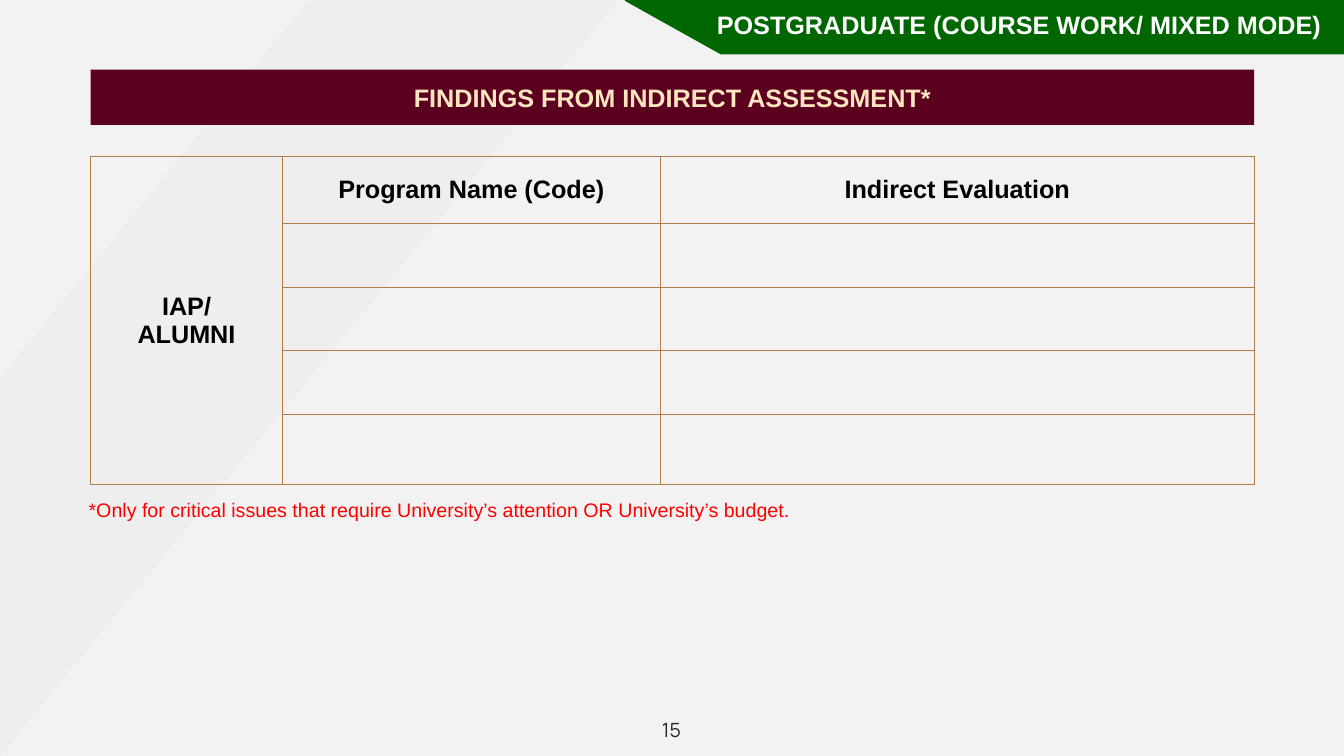
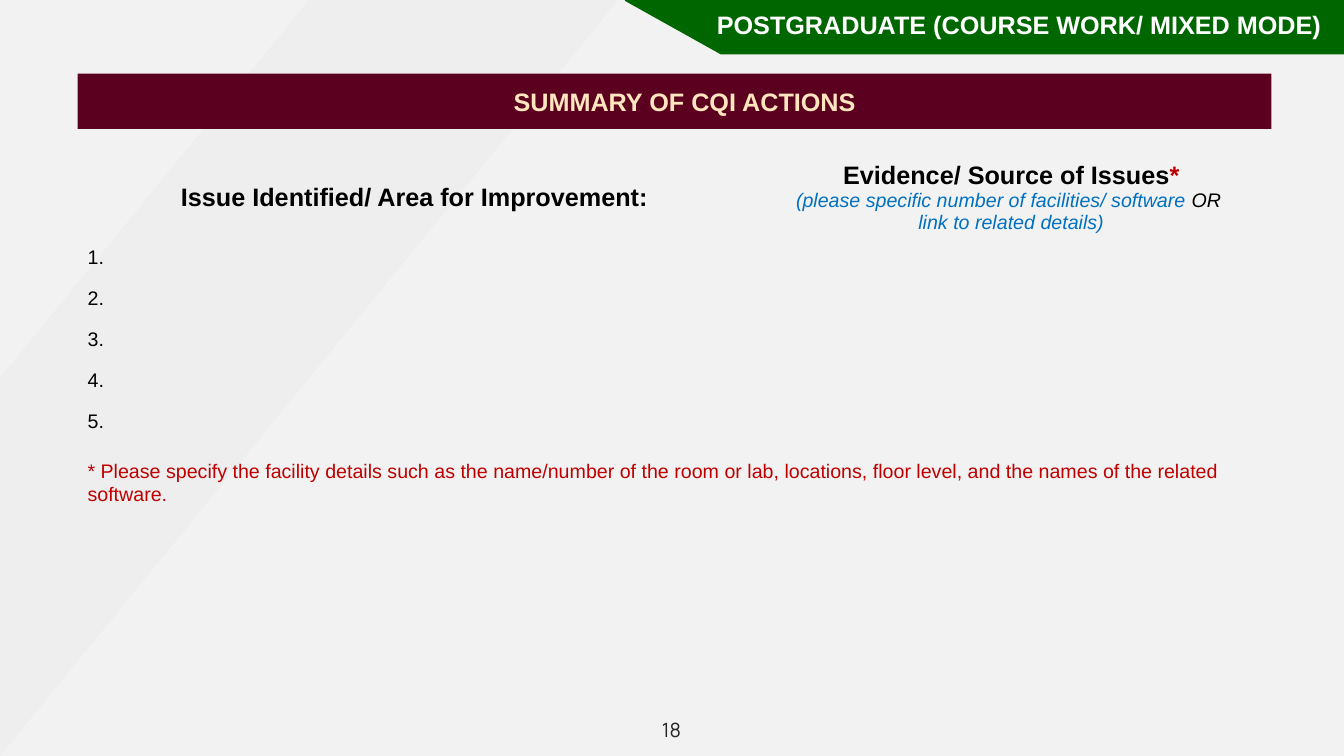
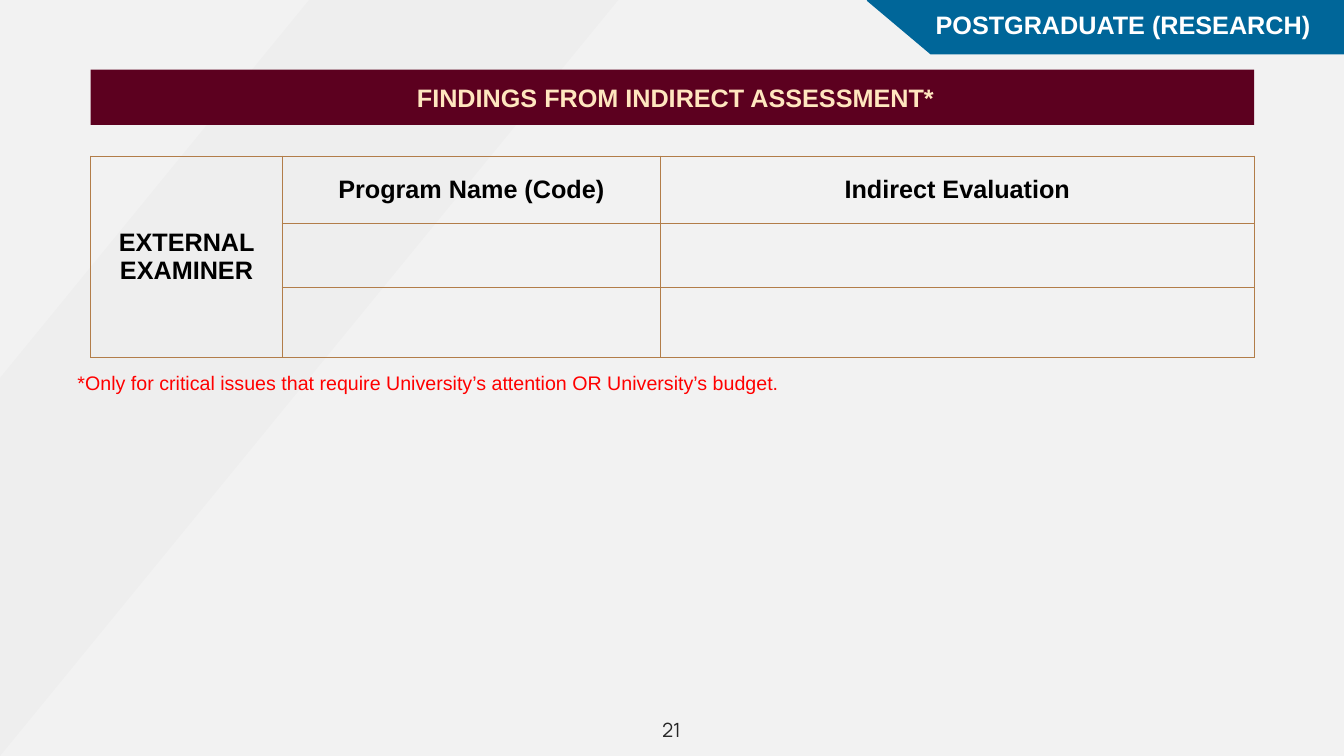
from collections import namedtuple

from lxml import etree
from pptx import Presentation, util as u
from pptx.dml.color import RGBColor
from pptx.enum import shapes, text
from pptx.oxml.ns import qn

Box = namedtuple("Box", "left top width height")

SLIDE_W, SLIDE_H = 13.33, 7.5
PAPER, STRIPE = "F2F2F2", "BFBFBF"
MAROON, CREAM, BRONZE = "5C001F", "FFE6BF", "B27D49"
GREEN, BLUE, WHITE, BLACK = "006600", "006699", "FFFFFF", "000000"
RED, DARK_RED, LINK_BLUE, GREY = "FF0000", "C00000", "0070C0", "262626"
NO_TABLE_STYLE = "{2D5ABB26-0587-4C30-8999-92F81FD0307C}"
HEADING, BODY = 18, 14
CENTER = text.PP_ALIGN.CENTER
MIDDLE = text.MSO_ANCHOR.MIDDLE

COURSE_WORK = dict(label="POSTGRADUATE (COURSE WORK/ MIXED MODE)", color=GREEN,
                   left=6.19, slant=0.96, label_left=7.11)
RESEARCH = dict(label="POSTGRADUATE (RESEARCH)", color=BLUE,
                left=8.59, slant=0.64, label_left=9.28)
CRITICAL_NOTE = ("*Only for critical issues that require University’s attention "
                 "OR University’s budget.")
FACILITY_NOTE = ("* Please specify the facility details such as the name/number of the room "
                 "or lab, locations, floor level, and the names of the related software.")


def rgb(color):
    return RGBColor.from_string(color)


def inches(lengths):
    return [u.Inches(length) for length in lengths]


def paint(shape, color):
    shape.shadow.inherit = False
    shape.fill.solid()
    shape.fill.fore_color.rgb = rgb(color)
    shape.line.fill.background()


def write(frame, paragraphs, align=text.PP_ALIGN.LEFT, **style):
    """Fill a text frame; a paragraph is a string or a list of (text, style changes)."""
    if isinstance(paragraphs, str):
        paragraphs = [paragraphs]
    for index, content in enumerate(paragraphs):
        paragraph = frame.add_paragraph() if index else frame.paragraphs[0]
        paragraph.alignment = align
        runs = [(content, {})] if isinstance(content, str) else content
        for words, changes in runs:
            look = dict(size=HEADING, font="Arial", color=BLACK, bold=False, italic=False)
            look.update(style, **changes)
            run = paragraph.add_run()
            run.text = words
            run.font.size = u.Pt(look["size"])
            run.font.name = look["font"]
            run.font.color.rgb = rgb(look["color"])
            run.font.bold = look["bold"]
            run.font.italic = look["italic"]


def add_label(slide, box, words, anchor=text.MSO_ANCHOR.TOP, **style):
    frame = slide.shapes.add_textbox(*inches(box)).text_frame
    frame.word_wrap = True
    frame.vertical_anchor = anchor
    write(frame, words, **style)


def add_backdrop(slide):
    stripe = slide.shapes.add_shape(shapes.MSO_SHAPE.DIAGONAL_STRIPE,
                                    *inches(Box(0, 0, 0.46 * SLIDE_W, SLIDE_H)))
    paint(stripe, STRIPE)
    tint = stripe.fill._xPr.find(qn("a:solidFill"))[0]
    etree.SubElement(tint, qn("a:alpha"), val="8000")


def add_ribbon(slide, label, color, left, slant, label_left):
    top, bottom = -0.03, 0.54
    corners = [(SLIDE_W, bottom), (left + slant, bottom), (left + 0.01, 0.01),
               (left, top), (SLIDE_W, top)]
    start, *others = [inches(corner) for corner in corners]
    builder = slide.shapes.build_freeform(*start)
    builder.add_line_segments(others, close=True)
    ribbon = builder.convert_to_shape()
    paint(ribbon, color)
    frame = ribbon.text_frame
    frame.word_wrap = True
    frame.vertical_anchor = text.MSO_ANCHOR.TOP
    frame.margin_left = u.Inches(label_left - left)
    frame.margin_top = u.Inches(0.09 - top)
    frame.margin_right = frame.margin_bottom = 0
    write(frame, label, color=WHITE, bold=True)


def add_title_bar(slide, box, title, shift=0):
    """Draw the title bar; shift moves the title right of the bar's middle."""
    bar = slide.shapes.add_shape(shapes.MSO_SHAPE.RECTANGLE, *inches(box))
    paint(bar, MAROON)
    bar.text_frame.margin_left = u.Inches(0.1 + 2 * shift)
    bar.text_frame.vertical_anchor = MIDDLE
    write(bar.text_frame, title, align=CENTER, color=CREAM, bold=True)


def add_plain_table(slide, left, top, widths, heights):
    box = Box(left, top, sum(widths), sum(heights))
    graphic = slide.shapes.add_table(len(heights), len(widths), *inches(box))
    table = graphic.table
    table.first_row = table.horz_banding = False
    graphic._element.find(".//" + qn("a:tableStyleId")).text = NO_TABLE_STYLE
    for column, width in zip(table.columns, widths):
        column.width = u.Inches(width)
    for row, height in zip(table.rows, heights):
        row.height = u.Inches(height)
    for cell in table.iter_cells():
        cell.fill.background()
    return table


def outline(cell, color, points=1):
    properties = cell._tc.get_or_add_tcPr()
    for index, side in enumerate(("lnL", "lnR", "lnT", "lnB")):
        line = etree.Element(qn("a:" + side), w=str(u.Pt(points)))
        fill = etree.SubElement(line, qn("a:solidFill"))
        etree.SubElement(fill, qn("a:srgbClr"), val=color)
        properties.insert(index, line)


def fill_heading(cell, words):
    cell.vertical_anchor = MIDDLE
    write(cell.text_frame, words, align=CENTER, bold=True)


def add_page(deck, ribbon, number):
    slide = deck.slides.add_slide(deck.slide_layouts[6])
    add_backdrop(slide)
    add_ribbon(slide, **ribbon)
    add_label(slide, Box(5.16, 7.04, 3, 0.4), number, anchor=MIDDLE,
              align=CENTER, size=BODY, font="Manrope", color=GREY)
    return slide


def findings_page(deck, ribbon, number, source, entries, note_left, shift=0):
    """Build a findings page with a table of empty entries for one source."""
    slide = add_page(deck, ribbon, number)
    bar = Box(0.9, 0.69, 11.54, 0.55)
    add_title_bar(slide, bar, "FINDINGS FROM INDIRECT ASSESSMENT*", shift)
    heights = [0.67] + [0.63] * (entries - 1) + [0.69]
    top = bar.top + bar.height + 0.31
    table = add_plain_table(slide, bar.left, top, [1.9, 3.75, 5.89], heights)
    for cell in table.iter_cells():
        outline(cell, BRONZE)
    table.cell(0, 0).merge(table.cell(entries, 0))
    for column, heading in enumerate([source, "Program Name (Code)", "Indirect Evaluation"]):
        fill_heading(table.cell(0, column), heading)
    note_top = top + sum(heights) + 0.09
    add_label(slide, Box(note_left, note_top, 7.78, 0.34), CRITICAL_NOTE, size=BODY, color=RED)


def actions_page(deck, ribbon, number, entries=5):
    slide = add_page(deck, ribbon, number)
    bar = Box(0.77, 0.73, 11.84, 0.55)
    add_title_bar(slide, bar, "SUMMARY OF CQI ACTIONS", shift=0.1)
    header, body = 0.86, 2.03
    top = bar.top + bar.height + 0.25
    table = add_plain_table(slide, bar.left, top, [6.68, 5.16],
                            [header] + [body / entries] * entries)
    hint = dict(size=BODY, color=LINK_BLUE, bold=False, italic=True)
    fill_heading(table.cell(0, 0), "Issue Identified/ Area for Improvement:")
    fill_heading(table.cell(0, 1), [
        [("Evidence/ Source of Issues", {}), ("*", dict(color=DARK_RED))],
        [("(please specific number of facilities/ software ", hint),
         ("OR ", dict(hint, color=BLACK))],
        [("link to related details)", hint)],
    ])
    for row in range(1, entries + 1):
        write(table.cell(row, 0).text_frame, f"{row}.", size=BODY)
    note = Box(bar.left, top + header + body + 0.08, bar.width, 0.57)
    add_label(slide, note, FACILITY_NOTE, size=BODY, color=DARK_RED)


def main():
    deck = Presentation()
    deck.slide_width, deck.slide_height = inches((SLIDE_W, SLIDE_H))
    backdrop = deck.slide_master.background.fill
    backdrop.solid()
    backdrop.fore_color.rgb = rgb(PAPER)
    findings_page(deck, COURSE_WORK, "15", ["IAP/", "ALUMNI"], entries=4, note_left=0.78)
    actions_page(deck, COURSE_WORK, "18")
    findings_page(deck, RESEARCH, "21", "EXTERNAL EXAMINER", entries=2,
                  note_left=0.67, shift=0.03)
    deck.save("out.pptx")


if __name__ == "__main__":
    main()
